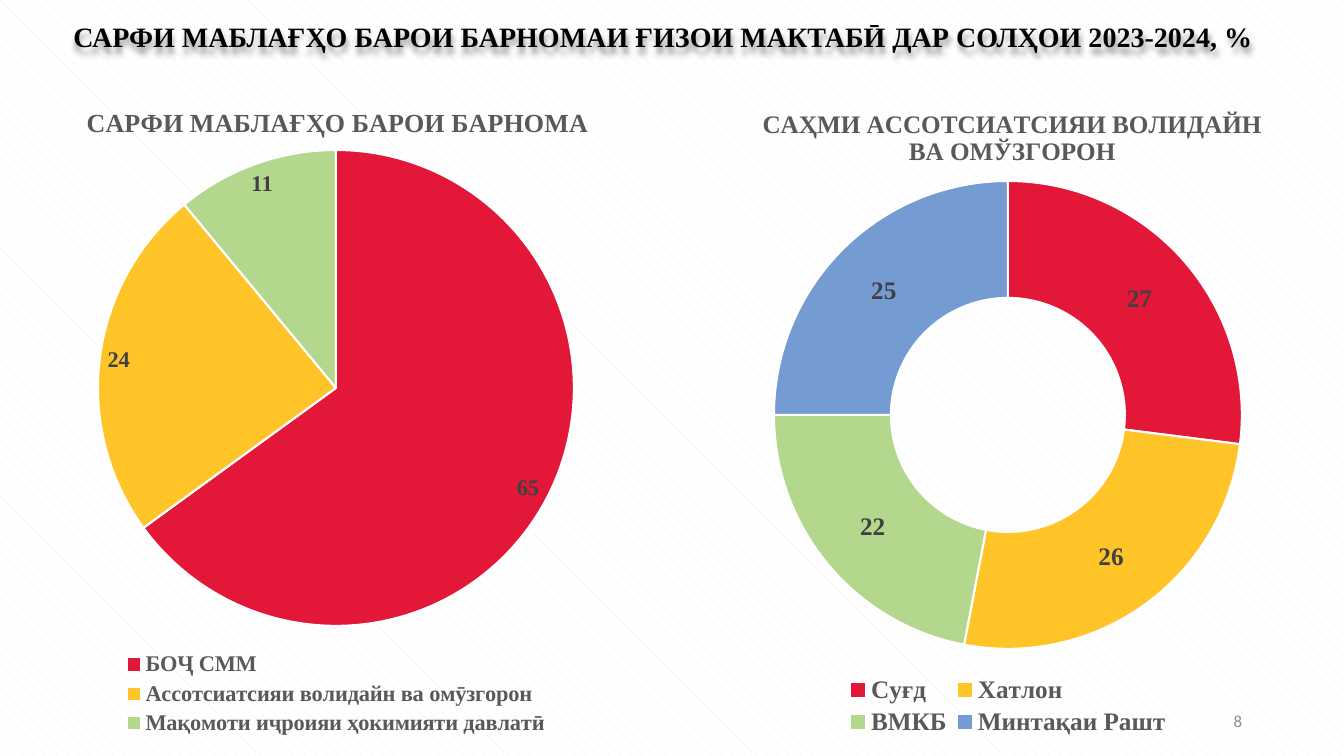
from lxml.etree import SubElement
from pptx import Presentation
from pptx.chart.data import CategoryChartData
from pptx.dml.color import RGBColor
from pptx.enum.chart import XL_CHART_TYPE as ChartType, XL_LABEL_POSITION as LabelPosition
from pptx.enum.chart import XL_LEGEND_POSITION as LegendPosition
from pptx.enum.dml import MSO_PATTERN as Pattern
from pptx.enum.text import MSO_ANCHOR as Anchor, PP_ALIGN as Align
from pptx.oxml import parse_xml
from pptx.oxml.ns import nsdecls, qn
from pptx.util import Emu, Pt

THEME = {
    "wedges": ["E31737", "FFC427", "B4D78E", "749CD3"],
    "white": "FFFFFF",
    "hatch": "F2F2F2",
    "heading": {"size": 20, "color": "000000", "name": "Times New Roman", "bold": True},
    "number": {"size": 12, "color": "8C8C8C", "name": "Calibri", "bold": False},
    "chart": {"color": "595959", "name": "Times New Roman", "bold": True},
    "label": {"color": "404040", "name": "Times New Roman", "bold": True},
}
SCALE = 914400 / 100.8
CHART_TOP, CHART_WIDTH, CHART_HEIGHT = 80, 672, 661


def set_font(font, values):
    for name, value in values.items():
        if name == "color":
            font.color.rgb = RGBColor.from_string(value)
        else:
            setattr(font, name, Pt(value) if name == "size" else value)


def place(element, index, box, target=None):
    for old in element.findall(qn("c:layout")):
        element.remove(old)
    layout = parse_xml(f"<c:layout {nsdecls('c')}/>")
    manual = SubElement(layout, qn("c:manualLayout"))
    if target:
        SubElement(manual, qn("c:layoutTarget"), val=target)
    for axis in "xy":
        SubElement(manual, qn(f"c:{axis}Mode"), val="edge")
    for axis, length, full in zip("xywh", box, [CHART_WIDTH, CHART_HEIGHT] * 2):
        SubElement(manual, qn(f"c:{axis}"), val=f"{length / full:.4f}")
    element.insert(index, layout)


presentation = Presentation()
presentation.slide_width = Emu(round(1344 * SCALE))
presentation.slide_height = Emu(round(756 * SCALE))
slide = presentation.slides.add_slide(presentation.slide_layouts[6])

background = slide.background.fill
background.patterned()
background.pattern = Pattern.SHINGLE
background.fore_color.rgb = RGBColor.from_string(THEME["hatch"])
background.back_color.rgb = RGBColor.from_string(THEME["white"])

texts = [
    ("САРФИ МАБЛАҒҲО БАРОИ БАРНОМАИ ҒИЗОИ МАКТАБӢ ДАР СОЛҲОИ 2023-2024, %",
     (13, 15, 1300, 44), "heading", Align.CENTER, Anchor.TOP),
    ("8", (950, 701, 302, 40), "number", Align.RIGHT, Anchor.MIDDLE),
]
for text, box, style, alignment, anchor in texts:
    shape = slide.shapes.add_textbox(*[Emu(round(length * SCALE)) for length in box])
    frame = shape.text_frame
    frame.word_wrap = True
    frame.vertical_anchor = anchor
    paragraph = frame.paragraphs[0]
    paragraph.alignment = alignment
    run = paragraph.add_run()
    run.text = text
    set_font(run.font, THEME[style])
    if style == "heading":
        shape._element.spPr.append(parse_xml(
            f'<a:effectLst {nsdecls("a")}><a:outerShdw blurRad="50800" dist="38100" dir="5400000">'
            '<a:srgbClr val="000000"><a:alpha val="40000"/></a:srgbClr></a:outerShdw></a:effectLst>'))

charts = [
    {"type": ChartType.PIE, "left": 0, "size": 16, "title_size": 18.6,
     "title": "САРФИ МАБЛАҒҲО БАРОИ БАРНОМА",
     "values": {"БОҶ СММ": 65, "Ассотсиатсияи волидайн ва омӯзгорон": 24,
                "Мақомоти иҷроияи ҳокимияти давлатӣ": 11},
     "title_at": (82, 22), "plot_at": (98, 70, 476, 476), "legend_at": (120, 568, 432, 92)},
    {"type": ChartType.DOUGHNUT, "left": 672, "size": 18, "title_size": 18,
     "title": "САҲМИ АССОТСИАТСИЯИ ВОЛИДАЙН ВА ОМЎЗГОРОН",
     "values": {"Суғд": 27, "Хатлон": 26, "ВМКБ": 22, "Минтақаи Рашт": 25},
     "title_at": (86, 24), "plot_at": (102, 101, 468, 468), "legend_at": (168, 592, 336, 68)},
]
for item in charts:
    data = CategoryChartData(number_format="#,##0")
    data.categories = list(item["values"])
    data.add_series("Series 1", list(item["values"].values()))
    box = (item["left"], CHART_TOP, CHART_WIDTH, CHART_HEIGHT)
    chart = slide.shapes.add_chart(
        item["type"], *[Emu(round(length * SCALE)) for length in box], data).chart
    set_font(chart.font, {**THEME["chart"], "size": item["size"]})

    chart.has_title = True
    title = chart.chart_title
    title.include_in_layout = False
    run = title.text_frame.paragraphs[0].add_run()
    run.text = item["title"]
    set_font(run.font, {**THEME["chart"], "size": item["title_size"]})
    place(title._element, 1, item["title_at"])

    chart.has_legend = True
    legend = chart.legend
    legend.position = LegendPosition.BOTTOM
    legend.include_in_layout = False
    set_font(legend.font, {**THEME["chart"], "size": item["size"]})
    place(legend._element, 1, item["legend_at"])

    plot = chart.plots[0]
    plot.vary_by_categories = True
    plot.has_data_labels = True
    labels = plot.data_labels
    labels.show_value = True
    labels.show_percentage = False
    labels.number_format = "#,##0"
    labels.number_format_is_linked = False
    set_font(labels.font, {**THEME["label"], "size": item["size"]})
    if item["type"] == ChartType.PIE:
        labels.position = LabelPosition.BEST_FIT
    else:
        plot._element.find(qn("c:holeSize")).set("val", "75")
    place(chart._chartSpace.chart.plotArea, 0, item["plot_at"], "inner")

    for index, color in enumerate(THEME["wedges"][:len(item["values"])]):
        wedge = plot.series[0].points[index].format
        wedge.fill.solid()
        wedge.fill.fore_color.rgb = RGBColor.from_string(color)
        wedge.line.color.rgb = RGBColor.from_string(THEME["white"])
        wedge.line.width = Pt(1.5)

presentation.save("out.pptx")
